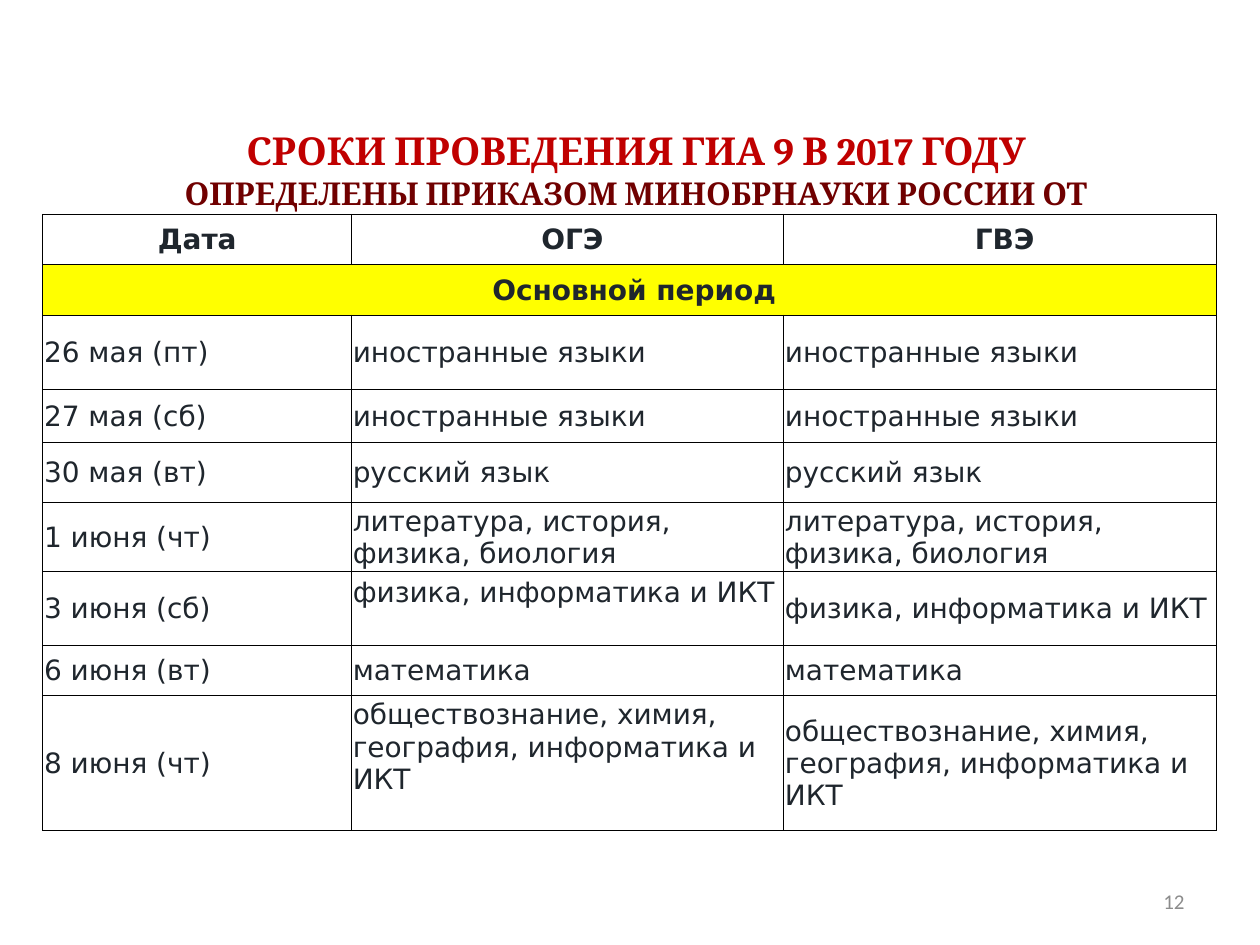
import pptx
import pptx.util
import pptx.dml.color
import pptx.enum.text
import lxml.etree

Inches = pptx.util.Inches
Pt = pptx.util.Pt
ALIGN = pptx.enum.text.PP_ALIGN
MIDDLE = pptx.enum.text.MSO_ANCHOR.MIDDLE
NS = "http://schemas.openxmlformats.org/drawingml/2006/main"

COLORS = {
    "red": "C00000",
    "maroon": "700000",
    "gray": "8C8C8C",
    "ink": "1F262D",
    "yellow": "FFFF00",
    "line": "000000",
}


def write(para, text, size=16, font="DejaVu Sans", color="ink", bold=False, align=ALIGN.LEFT):
    para.alignment = align
    run = para.add_run()
    run.text = text
    run.font.size = Pt(size)
    run.font.name = font
    run.font.bold = bold
    run.font.color.rgb = pptx.dml.color.RGBColor.from_string(COLORS[color])


class Deck:
    def __init__(self):
        self.show = pptx.Presentation()
        self.show.slide_width = Inches(10)
        self.show.slide_height = Inches(7.5)
        self.slide = self.show.slides.add_slide(self.show.slide_layouts[6])

    def label(self, box, lines, base=0.05, **style):
        frame = self.slide.shapes.add_textbox(*map(Inches, box)).text_frame
        frame.word_wrap = True
        frame.vertical_anchor = MIDDLE
        frame.margin_bottom = Inches(base)
        para = frame.paragraphs[0]
        for index, (text, look) in enumerate(lines):
            if index:
                para.add_line_break()
            write(para, text, **style, **look)

    def border(self, cell):
        props = cell._tc.get_or_add_tcPr()
        for side in ("lnL", "lnR", "lnT", "lnB"):
            line = lxml.etree.SubElement(props, f"{{{NS}}}{side}", w=str(Pt(0.5)))
            fill = lxml.etree.SubElement(line, f"{{{NS}}}solidFill")
            lxml.etree.SubElement(fill, f"{{{NS}}}srgbClr", val=COLORS["line"])

    def cell(self, cell, text, fill=None, base=0, **style):
        cell.vertical_anchor = MIDDLE
        cell.margin_left = cell.margin_right = cell.margin_top = Inches(0.01)
        cell.margin_bottom = Inches(base)
        self.border(cell)
        if fill:
            cell.fill.solid()
            cell.fill.fore_color.rgb = pptx.dml.color.RGBColor.from_string(COLORS[fill])
        else:
            cell.fill.background()
        if text:
            write(cell.text_frame.paragraphs[0], text, **style)

    def table(self, box, cols, rows, data, band, raised):
        grid = self.slide.shapes.add_table(len(rows), len(cols), *map(Inches, box)).table
        grid.first_row = grid.horz_banding = False
        for col, width in zip(grid.columns, cols):
            col.width = Inches(width)
        for row, height in zip(grid.rows, rows):
            row.height = Inches(height)
        grid.cell(band, 0).merge(grid.cell(band, len(cols) - 1))
        for r, texts in enumerate(data):
            head = r <= band
            for c, text in enumerate(texts):
                self.cell(
                    grid.cell(r, c),
                    text,
                    fill="yellow" if r == band else None,
                    base=0.26 if (r, c) in raised else 0,
                    bold=head,
                    align=ALIGN.CENTER if head else ALIGN.LEFT,
                )


def main():
    deck = Deck()
    deck.label(
        (0.55, 0.94, 9, 1.14),
        [
            ("СРОКИ ПРОВЕДЕНИЯ ГИА 9 В 2017 ГОДУ", {"size": 22, "color": "red"}),
            ("ОПРЕДЕЛЕНЫ ПРИКАЗОМ МИНОБРНАУКИ РОССИИ ОТ", {"size": 18, "color": "maroon"}),
        ],
        base=0.38,
        font="Cambria",
        bold=True,
        align=ALIGN.CENTER,
    )
    deck.label(
        (7.17, 6.95, 2.33, 0.4),
        [("12", {})],
        size=12,
        font="Calibri",
        color="gray",
        align=ALIGN.RIGHT,
    )
    exams = [
        ("26 мая (пт)", "иностранные языки"),
        ("27 мая (сб)", "иностранные языки"),
        ("30 мая (вт)", "русский язык"),
        ("1 июня (чт)", "литература, история, физика, биология"),
        ("3 июня (сб)", "физика, информатика и ИКТ"),
        ("6 июня (вт)", "математика"),
        ("8 июня (чт)", "обществознание, химия, география, информатика и ИКТ"),
    ]
    data = [("Дата", " ОГЭ", " ГВЭ"), (" Основной период", "", "")]
    data += [(date, topic, topic) for date, topic in exams]
    deck.table(
        (0.34, 1.7, 9.31, 4.89),
        [2.45, 3.43, 3.43],
        [0.4, 0.4, 0.59, 0.42, 0.48, 0.54, 0.59, 0.4, 1.07],
        data,
        band=1,
        raised={(6, 1), (8, 1)},
    )
    deck.show.save("out.pptx")


if __name__ == "__main__":
    main()
